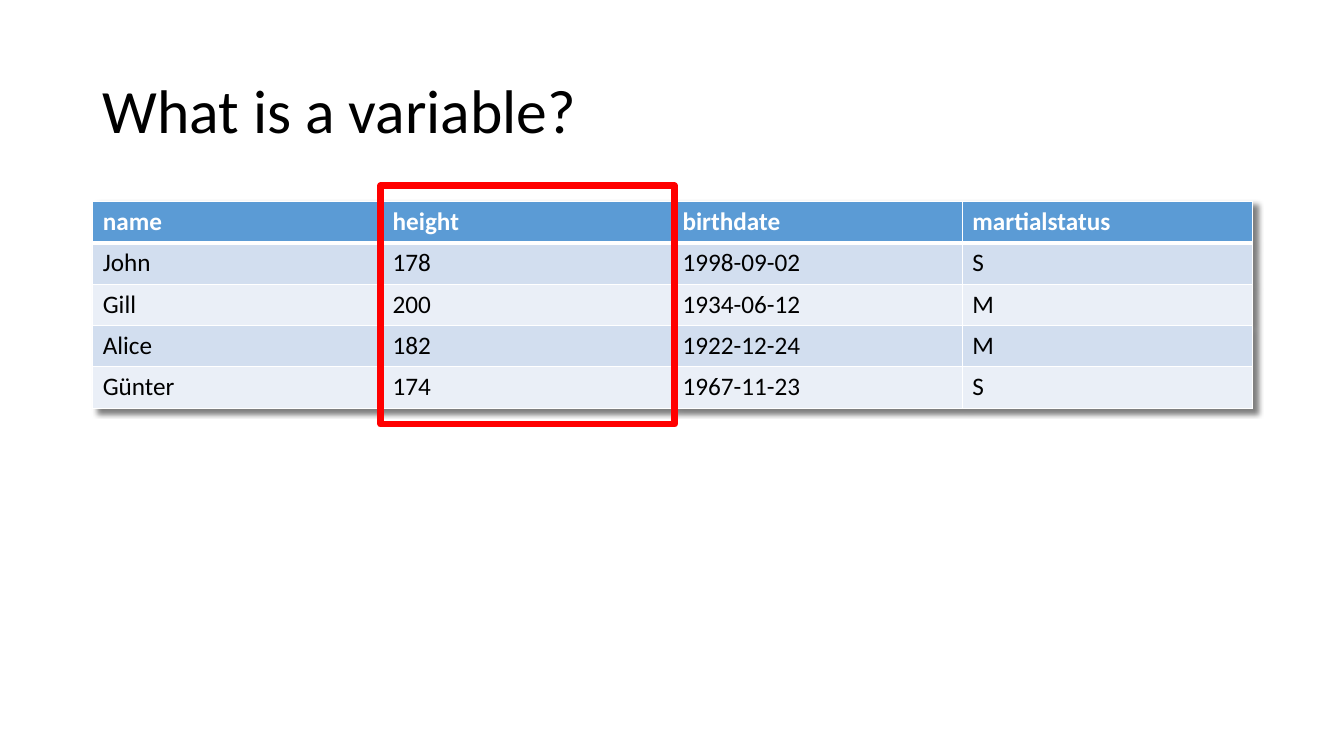
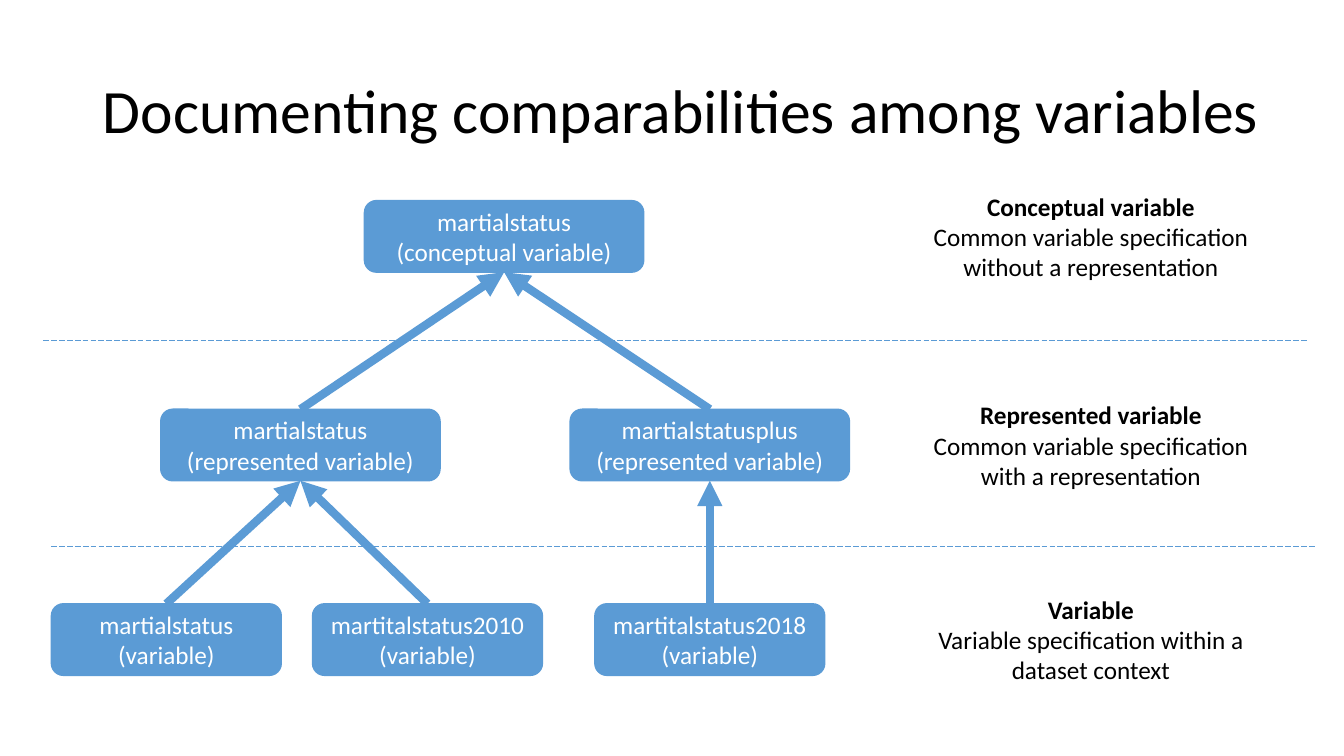
from lxml.etree import SubElement
from pptx import Presentation
from pptx.dml.color import RGBColor
from pptx.enum.dml import MSO_LINE_DASH_STYLE as Dash
from pptx.enum.shapes import MSO_CONNECTOR as Connector, MSO_SHAPE as Shape
from pptx.enum.text import MSO_ANCHOR as Anchor, PP_ALIGN as Align
from pptx.oxml import parse_xml
from pptx.oxml.ns import nsdecls, qn
from pptx.util import Inches, Pt

# Shared style
FONT = "Calibri"
BLACK = RGBColor(0x00, 0x00, 0x00)
WHITE = RGBColor(0xFF, 0xFF, 0xFF)
BLUE = RGBColor(0x5B, 0x9B, 0xD5)
BANDS = (RGBColor(0xEA, 0xEF, 0xF7), RGBColor(0xD2, 0xDE, 0xEF))
RED = RGBColor(0xFF, 0x00, 0x00)
TITLE_SIZE, BODY_SIZE = 44, 18

# Shared grid, in inches
SLIDE_W, SLIDE_H = 13.33, 7.5
MARGIN = 0.92
CONTENT_W = 11.5
TITLE_TOP, TITLE_H = 0.4, 1.45

# Table of persons
TABLE_TOP, ROW_H = 2, 0.41
PERSONS = [
    ("name", "height", "birthdate", "martialstatus"),
    ("John", "178", "1998-09-02", "S"),
    ("Gill", "200", "1934-06-12", "M"),
    ("Alice", "182", "1922-12-24", "M"),
    ("Günter", "174", "1967-11-23", "S"),
]

# Tiers of the variable tree: top, box width, boxes as (key, centre, name), kind
BOX_H = 0.71
TIERS = [
    (1.99, 2.77, "conceptual variable", [("concept", 5, "martialstatus")]),
    (4.06, 2.77, "represented variable",
     [("status", 2.98, "martialstatus"), ("plus", 7.04, "martialstatusplus")]),
    (5.99, 2.28, "variable",
     [("plain", 1.65, "martialstatus"), ("2010", 4.24, "martitalstatus2010"),
      ("2018", 7.04, "martitalstatus2018")]),
]
ARROWS = [("status", "concept"), ("plus", "concept"), ("plain", "status"),
          ("2010", "status"), ("2018", "plus")]
DIVIDERS = [(0.43, 3.38), (0.51, 5.42)]
DIVIDER_W = 12.54
NOTE_LEFT, NOTE_W, NOTE_H = 9.09, 3.46, 1.21
NOTES = [
    ("Conceptual variable", "Common variable specification without a representation"),
    ("Represented variable", "Common variable specification with a representation"),
    ("Variable", "Variable specification within a dataset context"),
]


def inches(*lengths):
    return [Inches(length) for length in lengths]


def set_text(para, text, size=BODY_SIZE, color=BLACK, bold=False, align=None):
    para.text = text
    para.alignment = align
    font = para.font
    font.name, font.size, font.bold = FONT, Pt(size), bold
    font.color.rgb = color


def add_text_frame(page, left, top, width, height):
    box = page.shapes.add_textbox(*inches(left, top, width, height))
    frame = box.text_frame
    frame.word_wrap = True
    frame.vertical_anchor = Anchor.MIDDLE
    return frame


def add_page(deck, title, title_width=CONTENT_W):
    page = deck.slides.add_slide(deck.slide_layouts[6])
    frame = add_text_frame(page, MARGIN, TITLE_TOP, title_width, TITLE_H)
    para = frame.paragraphs[0]
    set_text(para, title, TITLE_SIZE)
    para.line_spacing = 0.9
    return page


def set_borders(cell, widths):
    """Draw white borders; widths maps the side letters L, R, T, B to points."""
    props = cell._tc.get_or_add_tcPr()
    for side, width in widths.items():
        props.append(parse_xml(
            f'<a:ln{side} {nsdecls("a")} w="{Pt(width)}"><a:solidFill>'
            f'<a:srgbClr val="{WHITE}"/></a:solidFill></a:ln{side}>'))


def add_table(page, rows):
    height = ROW_H * len(rows)
    frame = page.shapes.add_table(
        len(rows), len(rows[0]), *inches(MARGIN, TABLE_TOP, CONTENT_W, height))
    table = frame.table
    for r, row in enumerate(rows):
        header = r == 0
        for c, text in enumerate(row):
            cell = table.cell(r, c)
            set_text(cell.text_frame.paragraphs[0], text,
                     color=WHITE if header else BLACK, bold=header)
            set_borders(cell, {"L": 1, "R": 1, "T": 3 if r == 1 else 1,
                               "B": 3 if header else 1})
            cell.fill.solid()
            cell.fill.fore_color.rgb = BLUE if header else BANDS[r % 2]
    # Soft shadow to the lower right
    table._tbl.tblPr.insert(0, parse_xml(
        f'<a:effectLst {nsdecls("a")}><a:outerShdw blurRad="50800" dist="50800" '
        'dir="2700000" algn="tl" rotWithShape="0"><a:srgbClr val="000000">'
        '<a:alpha val="50000"/></a:srgbClr></a:outerShdw></a:effectLst>'))


def add_column_frame(page, column, column_count, row_count):
    width = CONTENT_W / column_count
    pad_x, pad_y = 0.02, 0.16
    frame = page.shapes.add_shape(Shape.RECTANGLE, *inches(
        MARGIN + column * width - pad_x, TABLE_TOP - pad_y,
        width + 2 * pad_x, ROW_H * row_count + 2 * pad_y))
    frame.shadow.inherit = False
    frame.fill.background()
    frame.line.color.rgb = RED
    frame.line.width = Pt(4.5)


def add_variable_box(page, center, top, width, text):
    box = page.shapes.add_shape(
        Shape.ROUNDED_RECTANGLE, *inches(center - width / 2, top, width, BOX_H))
    box.shadow.inherit = False
    box.fill.solid()
    box.fill.fore_color.rgb = BLUE
    box.line.color.rgb = BLUE
    box.line.width = Pt(1)
    box.text_frame.vertical_anchor = Anchor.MIDDLE
    set_text(box.text_frame.paragraphs[0], text, color=WHITE, align=Align.CENTER)
    return box


def add_line(page, width, left=0, top=0, length=0):
    line = page.shapes.add_connector(
        Connector.STRAIGHT, *inches(left, top, left + length, top))
    line.line.color.rgb = BLUE
    line.line.width = Pt(width)
    SubElement(line._element.spPr, qn("a:effectLst"))
    return line


def add_arrow(page, child, parent):
    arrow = add_line(page, 6)
    arrow.begin_connect(child, 0)
    arrow.end_connect(parent, 2)
    SubElement(arrow.line._get_or_add_ln(), qn("a:tailEnd"), type="triangle")


def add_note(page, top, heading, text):
    frame = add_text_frame(page, NOTE_LEFT, top, NOTE_W, NOTE_H)
    set_text(frame.paragraphs[0], heading, bold=True, align=Align.CENTER)
    set_text(frame.add_paragraph(), text, align=Align.CENTER)


def add_variable_page(deck):
    page = add_page(deck, "What is a variable?")
    add_table(page, PERSONS)
    add_column_frame(page, PERSONS[0].index("height"), len(PERSONS[0]), len(PERSONS))


def add_comparison_page(deck):
    page = add_page(deck, "Documenting comparabilities among variables", 11.85)
    boxes = {}
    for (top, width, kind, members), note in zip(TIERS, NOTES):
        for key, center, name in members:
            boxes[key] = add_variable_box(page, center, top, width, f"{name}\v({kind})")
        add_note(page, top + (BOX_H - NOTE_H) / 2, *note)
    for child, parent in ARROWS:
        add_arrow(page, boxes[child], boxes[parent])
    for left, top in DIVIDERS:
        add_line(page, 0.5, left, top, DIVIDER_W).line.dash_style = Dash.LONG_DASH


def main():
    deck = Presentation()
    deck.slide_width, deck.slide_height = inches(SLIDE_W, SLIDE_H)
    add_variable_page(deck)
    add_comparison_page(deck)
    deck.save("out.pptx")


if __name__ == "__main__":
    main()
